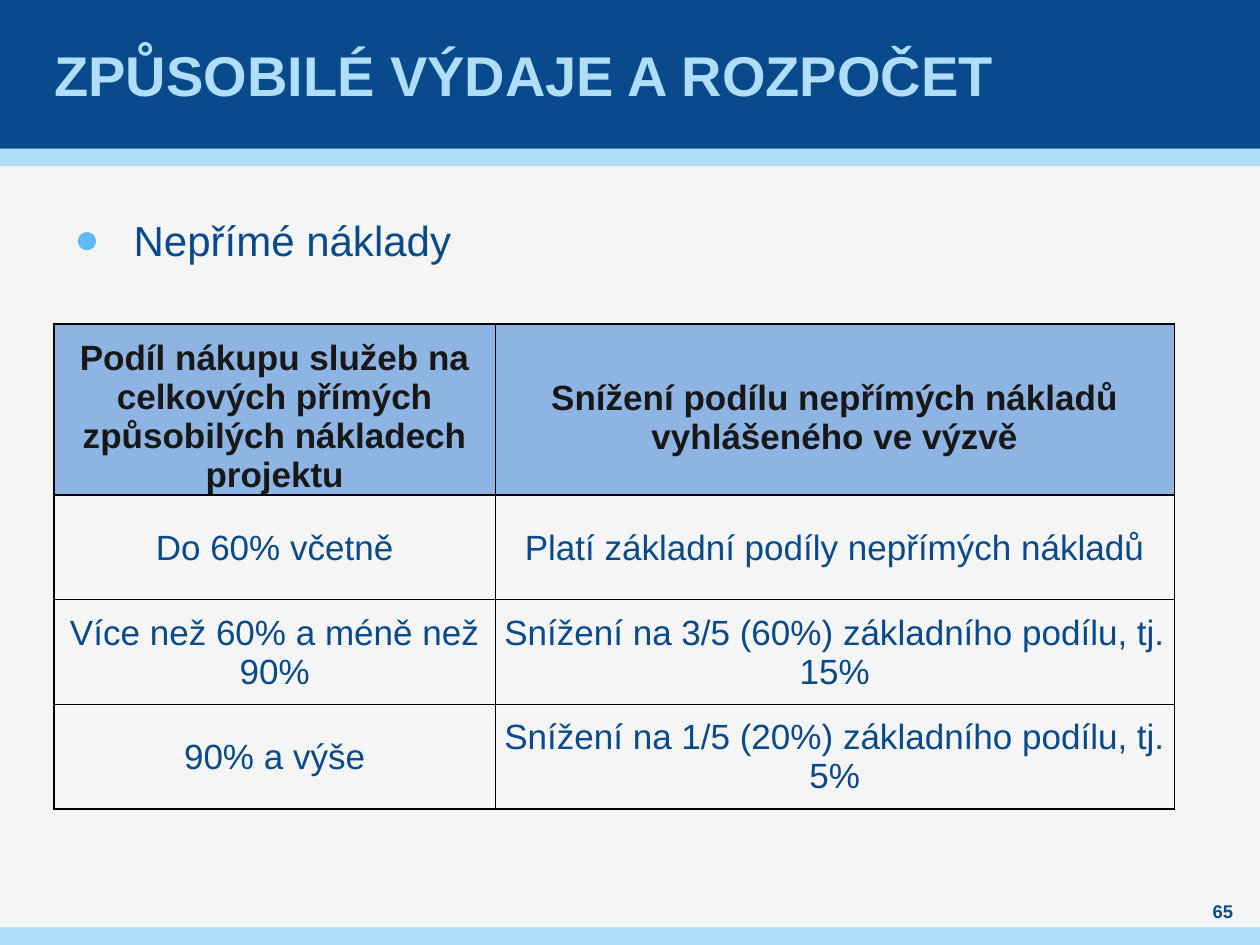
from pptx import Presentation
from pptx.util import Inches, Pt
from pptx.dml.color import RGBColor
from pptx.enum.shapes import MSO_SHAPE
from pptx.enum.text import MSO_ANCHOR, PP_ALIGN
from pptx.oxml import parse_xml
from pptx.oxml.ns import nsdecls

RECT = MSO_SHAPE.RECTANGLE
TOP, MID, LOW = MSO_ANCHOR.TOP, MSO_ANCHOR.MIDDLE, MSO_ANCHOR.BOTTOM
LEFT, MIDDLE = PP_ALIGN.LEFT, PP_ALIGN.CENTER
NAVY, SKY, PALE, HEAD = "084A8B", "AFDDFA", "F5F5F5", "8DB4E2"


def color(part, code):
    if hasattr(part, "solid"):
        part.solid()
        part = part.fore_color
    part.rgb = RGBColor.from_string(code)


def write(par, text, size, code, bold, align):
    par.alignment = align
    run = par.add_run()
    run.text = text
    run.font.name = "Arial"
    run.font.size = Pt(size)
    run.font.bold = bold
    color(run.font.color, code)


deck = Presentation()
deck.slide_width, deck.slide_height = Inches(10), Inches(7.5)
slide = deck.slides.add_slide(deck.slide_layouts[6])
color(slide.background.fill, PALE)

for top, high, code in [(1.18, 0.14, SKY), (0, 1.18, NAVY), (7.36, 0.14, SKY)]:
    band = slide.shapes.add_shape(RECT, 0, Inches(top), Inches(10), Inches(high))
    band.shadow.inherit = False
    color(band.fill, code)
    band.line.fill.background()

texts = [
    ("ZPŮSOBILÉ VÝDAJE A ROZPOČET", (0.39, 0, 9.21, 1.18), 0.04, MID, 32, SKY, True, LEFT),
    ("Nepřímé náklady", (0.59, 1.7, 8.82, 0.7), 0, TOP, 24, NAVY, False, LEFT),
    ("65", (9.45, 7.13, 0.51, 0.2), 0, MID, 10.5, NAVY, True, MIDDLE),
]
pars = []
for text, place, side, anchor, size, code, bold, align in texts:
    box = slide.shapes.add_textbox(*map(Inches, place))
    frame = box.text_frame
    frame.word_wrap = True
    frame.vertical_anchor = anchor
    frame.margin_left = frame.margin_right = Inches(side)
    frame.margin_top = frame.margin_bottom = 0
    write(frame.paragraphs[0], text, size, code, bold, align)
    pars.append(frame.paragraphs[0])

item = pars[1]
item.line_spacing = Pt(28.8)
item.space_before = item.space_after = Pt(6)
props = item._p.get_or_add_pPr()
props.set("marL", str(Inches(0.47)))
props.set("indent", str(Inches(-0.47)))
props.append(parse_xml(f'<a:buClr {nsdecls("a")}><a:srgbClr val="5FBBF5"/></a:buClr>'))
props.append(parse_xml(f'<a:buFont {nsdecls("a")} typeface="Arial"/>'))
props.append(parse_xml(f'<a:buChar {nsdecls("a")} char="●"/>'))

rows = [
    ("Podíl nákupu služeb na celkových přímých způsobilých nákladech projektu",
     "Snížení podílu nepřímých nákladů vyhlášeného ve výzvě"),
    ("Do 60% včetně", "Platí základní podíly nepřímých nákladů"),
    ("Více než 60% a méně než 90%", "Snížení na 3/5 (60%) základního podílu, tj. 15%"),
    ("90% a výše", "Snížení na 1/5 (20%) základního podílu, tj. 5%"),
]
grid = slide.shapes.add_table(
    4, 2, Inches(0.43), Inches(2.57), Inches(8.89), Inches(3.85)).table
grid.horz_banding = False
for col, wide in zip(grid.columns, (3.5, 5.39)):
    col.width = Inches(wide)
for r, pair in enumerate(rows):
    first = r == 0
    grid.rows[r].height = Inches(1.36 if first else 0.83)
    for c, text in enumerate(pair):
        cell = grid.cell(r, c)
        cell.margin_left = cell.margin_right = cell.margin_top = Inches(0.01)
        cell.margin_bottom = 0
        cell.vertical_anchor = LOW if first and c == 0 else MID
        if first and c == 1:
            cell.margin_top = Inches(0.13)
        write(cell.text_frame.paragraphs[0], text, 20,
              "181818" if first else NAVY, first, MIDDLE)
        if first:
            color(cell.fill, HEAD)
        else:
            cell.fill.background()
        edges = [("L", c == 0), ("R", c == 1), ("T", r < 2), ("B", r in (0, 3))]
        for spot, (side, thick) in enumerate(edges):
            width = Pt(1 if thick else 0.5)
            cell._tc.get_or_add_tcPr().insert(spot, parse_xml(
                f'<a:ln{side} {nsdecls("a")} w="{width}"><a:solidFill>'
                f'<a:srgbClr val="000000"/></a:solidFill></a:ln{side}>'))

deck.save("out.pptx")
